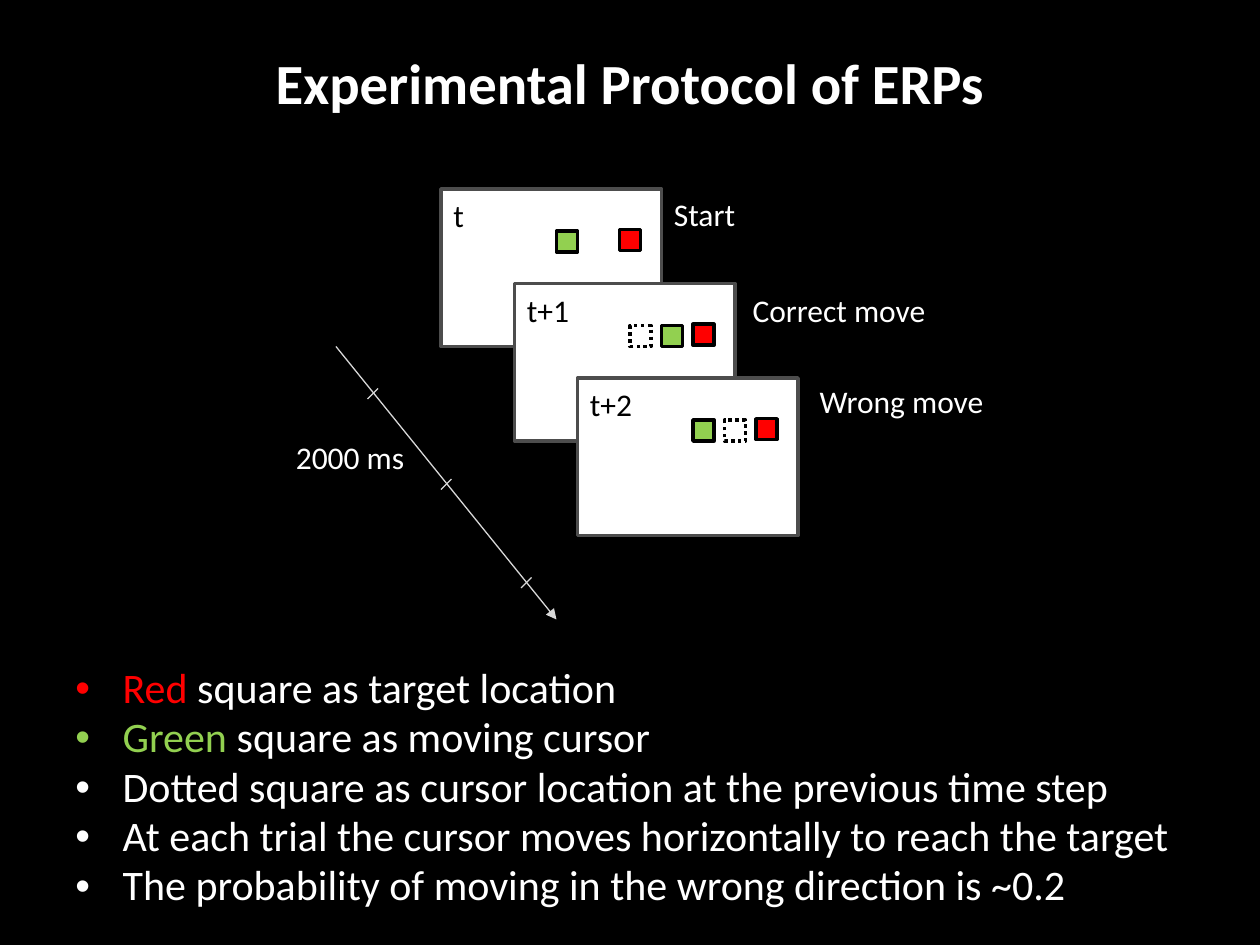
"""Build the slide that explains the experimental protocol of ERPs."""
from lxml.etree import SubElement
from pptx import Presentation
from pptx.dml.color import RGBColor
from pptx.enum.dml import MSO_LINE
from pptx.enum.shapes import MSO_CONNECTOR, MSO_SHAPE
from pptx.enum.text import MSO_ANCHOR, PP_ALIGN
from pptx.oxml.ns import qn
from pptx.util import Pt

PX = 9525
C = {"black": "000000", "white": "FFFFFF", "red": "FF0000", "green": "92D050",
     "frame": "4D4D4D", "axis": "D8D8D8"}
C = {name: RGBColor.from_string(value) for name, value in C.items()}


def add_text(shapes, box, lines, size=18, bold=False, **fmt):
    tf = shapes.add_textbox(*[v * PX for v in box]).text_frame
    tf.word_wrap = True
    for i, runs in enumerate(lines):
        p = tf.paragraphs[0] if i == 0 else tf.add_paragraph()
        for text, color in runs:
            r = p.add_run()
            r.text = text
            for key, value in {"name": "Calibri", "size": Pt(size), "bold": bold}.items():
                setattr(r.font, key, value)
            r.font.color.rgb = C[color]
        for key, value in fmt.items():
            setattr(p, key, value)
    return tf


def add_rect(shapes, box, fill, line, dash=None):
    sp = shapes.add_shape(MSO_SHAPE.RECTANGLE, *[v * PX for v in box])
    sp.shadow.inherit = False
    if fill:
        sp.fill.solid()
        sp.fill.fore_color.rgb = C[fill]
    else:
        sp.fill.background()
    sp.line.color.rgb = C[line]
    for key, value in {"width": Pt(2), "dash_style": dash}.items():
        setattr(sp.line, key, value)


prs = Presentation()
prs.slide_width, prs.slide_height = 960 * PX, 720 * PX
s = prs.slides.add_slide(prs.slide_layouts[6])
s.background.fill.solid()
s.background.fill.fore_color.rgb = C["black"]

title = add_text(s.shapes, (48, 29, 864, 67), [[("Experimental Protocol of ERPs", "white")]],
                 32.4, True, alignment=PP_ALIGN.CENTER)
title.vertical_anchor = MSO_ANCHOR.MIDDLE

bullets = [
    [("Red", "red"), (" square as target location", "white")],
    [("Green", "green"), (" square as moving cursor", "white")],
    [("Dotted square as cursor location at the previous time step", "white")],
    [("At each trial the cursor moves horizontally to reach the target", "white")],
    [("The probability of moving in the wrong direction is ~0.2", "white")],
]
body = add_text(s.shapes, (48, 501, 872, 195), bullets, 24, line_spacing=0.98)
for p in body.paragraphs:
    pPr = p._p.get_or_add_pPr()
    pPr.set("marL", str(36 * PX))
    pPr.set("indent", str(-36 * PX))
    SubElement(pPr, qn("a:buFont")).set("typeface", "Arial")
    SubElement(pPr, qn("a:buChar")).set("char", "•")

frames = [
    (336, 144, "t", 88, None, "Start", (504, 144, 88, 38)),
    (392, 216, "t+1", 112, 88, "Correct move", (564, 217, 156, 38)),
    (440, 288, "t+2", 88, 112, "Wrong move", (615, 286, 145, 38)),
]
for x, y, step, cursor, previous, label, label_box in frames:
    shapes = s.shapes.add_group_shape().shapes
    add_rect(shapes, (x, y, 168, 120), "white", "frame")
    add_rect(shapes, (x + 136, y + 31, 16, 16), "red", "black")
    add_rect(shapes, (x + cursor, y + 32, 16, 16), "green", "black")
    if previous:
        add_rect(shapes, (x + previous, y + 32, 16, 16), None, "black", MSO_LINE.ROUND_DOT)
    add_text(shapes, (x, y + 1, 64, 38), [[(step, "black")]])
    add_text(shapes, label_box, [[(label, "white")]])

ticks = [(x, y, x - 8, y + 8) for x, y in ((288, 296), (344, 365), (405, 440))]
for i, ends in enumerate([(256, 264, 424, 472)] + ticks):
    cxn = s.shapes.add_connector(MSO_CONNECTOR.STRAIGHT, *[v * PX for v in ends])
    cxn.line.color.rgb = C["axis"]
    cxn.line.width = Pt(0.75)
    if i == 0:
        SubElement(cxn.line._get_or_add_ln(), qn("a:tailEnd")).set("type", "triangle")
    SubElement(cxn._element.spPr, qn("a:effectLst"))
add_text(s.shapes, (216, 329, 156, 38), [[("2000 ms", "white")]])

prs.save("out.pptx")
